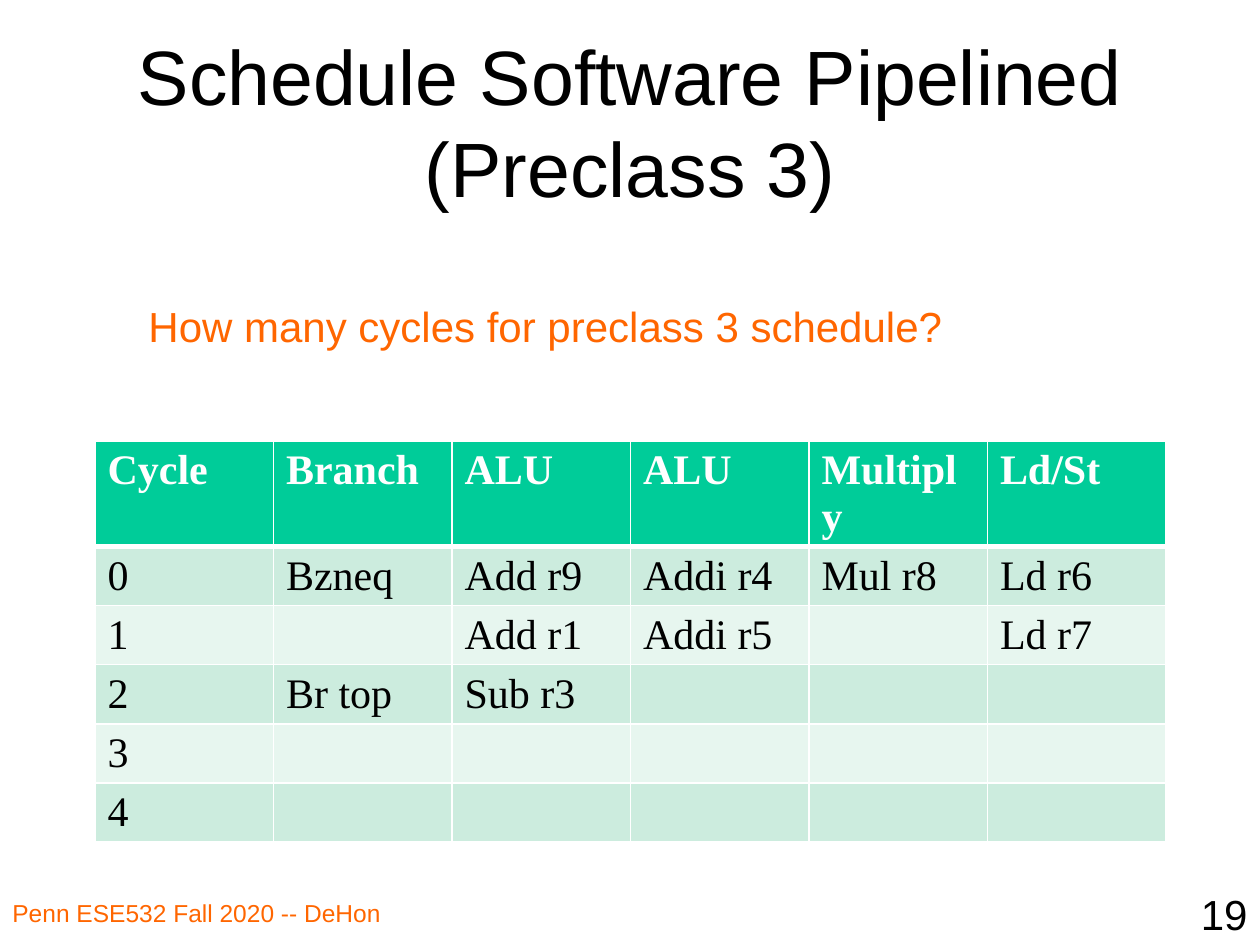
from lxml.etree import SubElement
from pptx import Presentation
from pptx.dml.color import RGBColor
from pptx.enum.text import MSO_ANCHOR, PP_ALIGN
from pptx.oxml.ns import qn
from pptx.util import Emu, Pt

BLACK, WHITE, ORANGE = "000000", "FFFFFF", "FF6600"
GREEN, MINT, PALE = "00CC99", "CCECDE", "E7F6EF"
SANS, SERIF = "Arial", "Times New Roman"
ROWS = [
    ["Cycle", "Branch", "ALU", "ALU", "Multiply", "Ld/St"],
    ["0", "Bzneq", "Add r9", "Addi r4", "Mul r8", "Ld r6"],
    ["1", "", "Add r1", "Addi r5", "", "Ld r7"],
    ["2", "Br top", "Sub r3", "", "", ""],
    ["3", "", "", "", "", ""],
    ["4", "", "", "", "", ""],
]


def px(n):
    return Emu(round(n * 914400 / 126))


def color(code):
    return RGBColor.from_string(code)


def edge(cell, side, width):
    """Draw one white cell border; borders must be set before the fill."""
    line = SubElement(cell._tc.get_or_add_tcPr(), qn(f"a:ln{side}"), w=str(Pt(width)))
    fill = SubElement(line, qn("a:solidFill"))
    SubElement(fill, qn("a:srgbClr"), val=WHITE)


class Deck:
    def __init__(self, wide, high):
        self.show = Presentation()
        self.show.slide_width, self.show.slide_height = px(wide), px(high)
        self.slide = self.show.slides.add_slide(self.show.slide_layouts[5])

    def add_run(self, para, text, size, ink, font=SANS, bold=False):
        run = para.add_run()
        run.text = text
        run.font.size, run.font.name, run.font.bold = Pt(size), font, bold
        run.font.color.rgb = color(ink)

    def title(self, box, lines):
        shape = self.slide.shapes.title
        shape.left, shape.top, shape.width, shape.height = map(px, box)
        frame = shape.text_frame
        frame.vertical_anchor = MSO_ANCHOR.MIDDLE
        para = frame.paragraphs[0]
        para.alignment = PP_ALIGN.CENTER
        for i, line in enumerate(lines):
            if i:
                para.add_line_break()
            self.add_run(para, line, 44, BLACK)

    def text(self, box, words, size, ink, align=PP_ALIGN.LEFT, wrap=True):
        frame = self.slide.shapes.add_textbox(*map(px, box)).text_frame
        frame.word_wrap = wrap
        para = frame.paragraphs[0]
        para.alignment = align
        self.add_run(para, words, size, ink)

    def table(self, box, rows):
        """Place a table with a header row and two alternating row fills."""
        grid = self.slide.shapes.add_table(len(rows), len(rows[0]), *map(px, box)).table
        for r, row in enumerate(rows):
            head = r == 0
            back = GREEN if head else MINT if r % 2 else PALE
            for c, words in enumerate(row):
                cell = grid.cell(r, c)
                for side in "LRTB":
                    thick = (head and side == "B") or (r == 1 and side == "T")
                    edge(cell, side, 3 if thick else 1)
                cell.fill.solid()
                cell.fill.fore_color.rgb = color(back)
                if words:
                    self.add_run(cell.text_frame.paragraphs[0], words, 24,
                                 WHITE if head else BLACK, SERIF, head)


def main():
    deck = Deck(1260, 945)
    deck.title((95, 42, 1071, 158), ["Schedule Software Pipelined", "(Preclass 3)"])
    deck.table((95, 441, 1071, 306), ROWS)
    deck.text((0, 892, 483, 53), "Penn ESE532 Fall 2020 -- DeHon", 14, ORANGE)
    deck.text((998, 882, 262, 63), "19", 24, BLACK, PP_ALIGN.RIGHT)
    deck.text((136, 294, 828, 63), "How many cycles for preclass 3 schedule?",
              24, ORANGE, wrap=False)
    deck.show.save("out.pptx")


if __name__ == "__main__":
    main()
